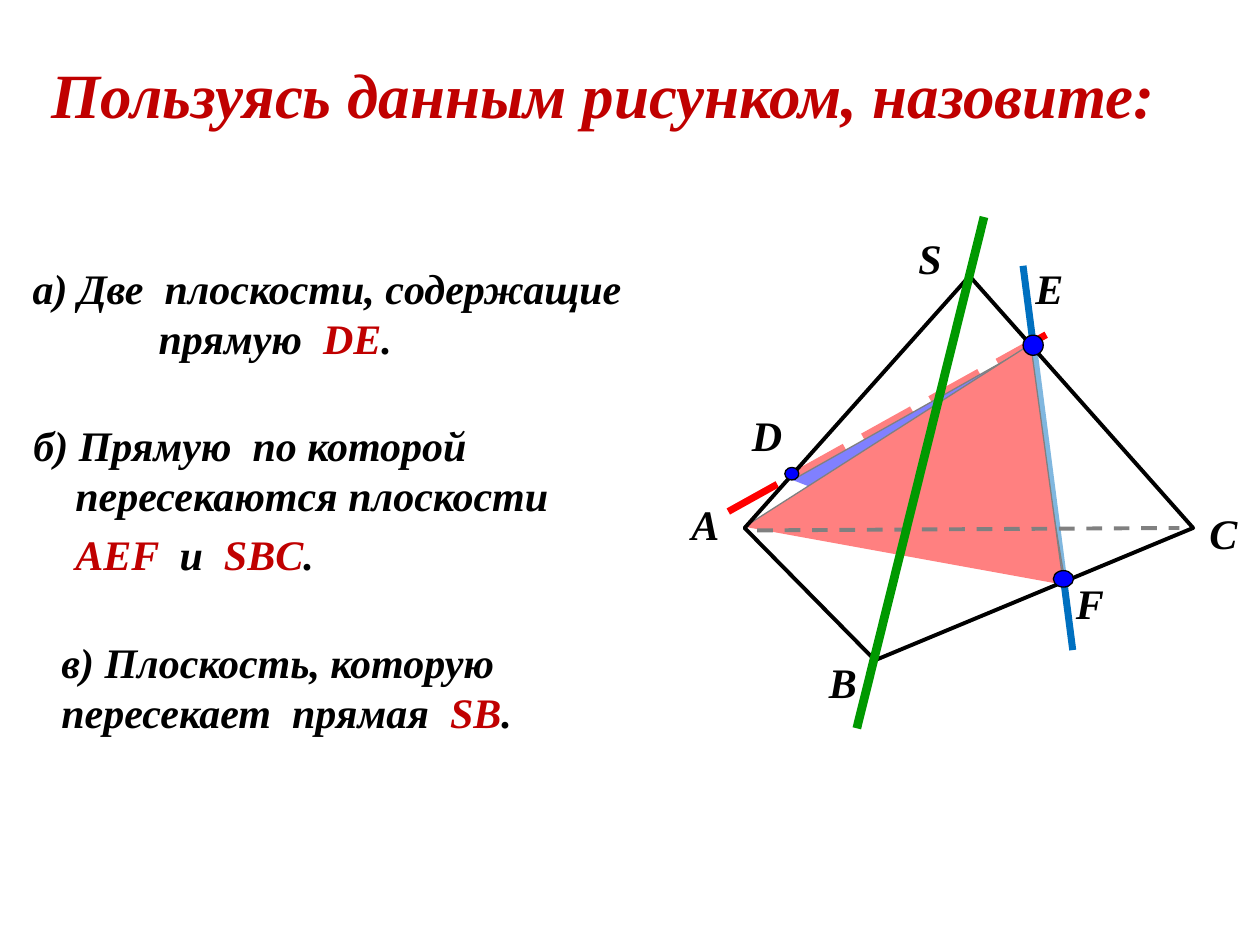
from lxml import etree
from pptx import Presentation
from pptx.dml.color import RGBColor
from pptx.enum.dml import MSO_LINE
from pptx.enum.shapes import MSO_CONNECTOR, MSO_SHAPE
from pptx.oxml.ns import qn
from pptx.util import Pt

STRAIGHT = MSO_CONNECTOR.STRAIGHT
OVAL = MSO_SHAPE.OVAL
DASH, LONG_DASH = MSO_LINE.DASH, MSO_LINE.LONG_DASH
FONT = "Times New Roman"
BLACK, WHITE, CRIMSON = "000000", "FFFFFF", "C00000"
RED, BLUE, SKY, GREEN = "FF0000", "0000FF", "0070C0", "009900"


def color(value):
    return RGBColor.from_string(value)


def add_text(slide, box, paragraphs, size=24, space_before=0):
    """Each paragraph is (left margin, first-line indent, [(text, colour), ...])."""
    frame = slide.shapes.add_textbox(*map(Pt, box)).text_frame
    frame.word_wrap = True
    for index, (margin, indent, runs) in enumerate(paragraphs):
        paragraph = frame.paragraphs[0] if index == 0 else frame.add_paragraph()
        paragraph.space_before = Pt(space_before)
        font = paragraph.font
        font.name, font.size, font.bold, font.italic = FONT, Pt(size), True, True
        properties = paragraph._p.get_or_add_pPr()
        properties.set("marL", str(Pt(margin)))
        properties.set("indent", str(Pt(indent)))
        for text, run_color in runs:
            run = paragraph.add_run()
            run.text = text
            run.font.color.rgb = color(run_color)


def add_line(slide, start, end, line_color, width, dash=None):
    line = slide.shapes.add_connector(STRAIGHT, *map(Pt, start + end))
    line.line.color.rgb = color(line_color)
    line.line.width = Pt(width)
    if dash is not None:
        line.line.dash_style = dash
    etree.SubElement(line._element.spPr, qn("a:effectLst"))


def style_shape(shape, fill, width):
    shape.shadow.inherit = False
    shape.fill.solid()
    shape.fill.fore_color.rgb = color(fill)
    shape.line.color.rgb = color(BLACK)
    shape.line.width = Pt(width)


def add_triangle(slide, points, fill, width, close=False, opacity=100):
    corners = [tuple(map(Pt, point)) for point in points]
    builder = slide.shapes.build_freeform(*corners[0])
    builder.add_line_segments(corners[1:], close=close)
    shape = builder.convert_to_shape()
    style_shape(shape, fill, width)
    if opacity < 100:
        fill_color = shape._element.spPr.find(".//" + qn("a:srgbClr"))
        etree.SubElement(fill_color, qn("a:alpha"), val=str(opacity * 1000))


def add_title(slide, box):
    runs = [("Пользуясь данным рисунком, назовите:", CRIMSON)]
    add_text(slide, box, [(0, 0, runs)], size=36)


def add_questions(slide, box):
    left, top, width = box
    # а) two planes through DE
    add_text(slide, (left + 11.5, top, width - 15, 65.5), [
        (36, -36, [("а) Две  плоскости, cодержащие", BLACK)]),
        (72, 0, [("прямую  ", BLACK), ("DE", CRIMSON), (".", BLACK)]),
    ])
    # б) common line of two planes
    add_text(slide, (left, top + 90, width, 100), [
        (36, -24, [("б) Прямую  по которой  пересекаются плоскости", BLACK)]),
        (36, 0, [("АЕF  ", CRIMSON), ("и  ", BLACK), ("SBC", CRIMSON), (".", BLACK)]),
    ], space_before=4.8)
    # в) plane crossed by SB
    add_text(slide, (left + 28, top + 213.8, width - 11, 65.5), [
        (0, 0, [("в) Плоскость, которую пересекает  прямая  ", BLACK),
                ("SB", CRIMSON), (".", BLACK)]),
    ], space_before=4.8)


def add_pyramid(slide, origin):
    def at(x, y):
        return origin[0] + x, origin[1] + y

    apex, a, b, c = at(166, 33.7), at(37.5, 177.7), at(112, 253.3), at(293.8, 177.7)

    # Lines EF and DE, behind the faces
    add_line(slide, at(196.6, 27.9), at(225, 247.5), SKY, 4)
    add_line(slide, at(28.2, 168.3), at(219.7, 61.8), RED, 4, LONG_DASH)

    # Section planes DEF and AEF
    add_triangle(slide, [at(64.9, 150.3), at(198.1, 75.4), at(221.1, 211.5)], BLUE, 0.75)
    add_triangle(slide, [at(37.5, 177), at(201, 72.6), at(219.7, 210.1)], RED, 0.75)

    # Hidden edge AC and the two translucent front faces
    add_line(slide, at(44.7, 179.1), at(285.9, 177.7), BLACK, 2.25, DASH)
    for face in ([a, b, apex], [b, apex, c]):
        add_triangle(slide, face, WHITE, 2.25, close=True, opacity=50)

    # Vertex and point labels
    labels = [("S", 129.7, 5.6), ("В", 78.6, 247.5), ("А", 0, 157.5), ("С", 296, 162.6),
              ("F", 219.7, 202.2), ("E", 196.6, 22.2), ("D", 34.6, 106.4)]
    for letter, x, y in labels:
        add_text(slide, at(x, y) + (32, 36), [(0, 0, [(letter, BLACK)])])

    # Points D, E and F, given by their centres
    for x, y, width, height in [(64.5, 146.7, 8, 7.2), (202.4, 73.3, 11.5, 11.5),
                                (219.7, 206.8, 11.5, 9.4)]:
        corner = at(x - width / 2, y - height / 2)
        dot = slide.shapes.add_shape(OVAL, *map(Pt, corner + (width, height)))
        style_shape(dot, BLUE, 0.75)

    # Line SB, in front
    add_line(slide, at(101.6, 292.2), at(174.3, 0), GREEN, 5)


def main():
    presentation = Presentation()
    presentation.slide_width, presentation.slide_height = Pt(720), Pt(540)
    slide = presentation.slides.add_slide(presentation.slide_layouts[6])
    add_questions(slide, (0, 146.2, 382))
    add_pyramid(slide, (388, 124))
    add_title(slide, (22.3, 28, 680, 51))
    presentation.save("out.pptx")


if __name__ == "__main__":
    main()
